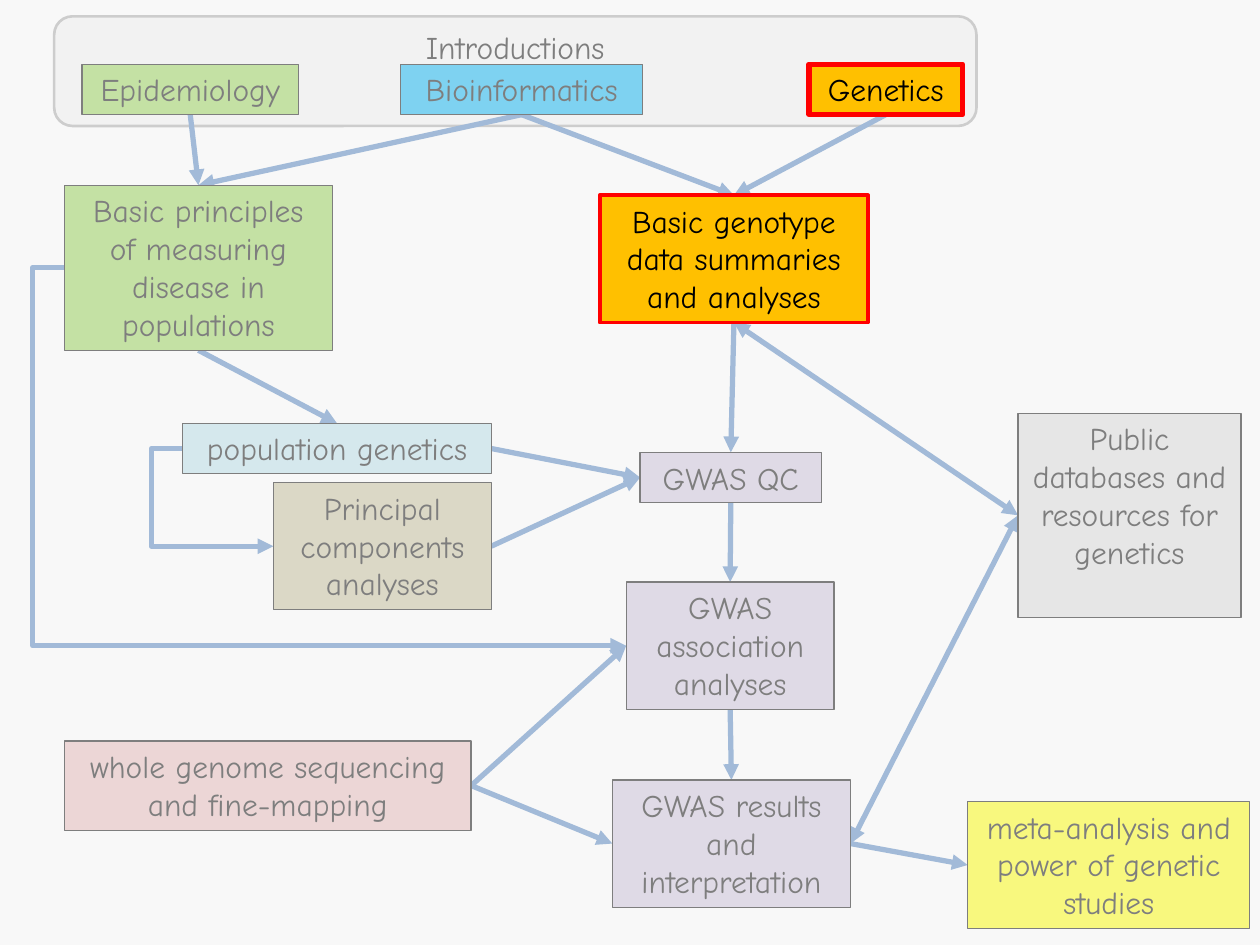
from enum import IntEnum
from lxml.etree import SubElement
from pptx import Presentation
from pptx.dml.color import RGBColor
from pptx.enum.shapes import MSO_CONNECTOR, MSO_SHAPE
from pptx.enum.text import MSO_ANCHOR, MSO_AUTO_SIZE, PP_ALIGN
from pptx.oxml.ns import qn
from pptx.util import Inches, Pt

COLORS = {
    "text": "000000", "outline": "000000", "arrow": "4B7EBC", "veil": "F2F2F2",
    "panel": "F2F2F2", "panel line": "A6A6A6", "epidemiology": "92D050",
    "bioinformatics": "00B0F0", "genetics": "FFC000", "highlight": "FF0000",
    "population": "B7DEE8", "components": "C4BD97", "gwas": "CCC1DA",
    "sequencing": "E6B9B8", "databases": "D9D9D9", "meta": "FFFF00",
}
COLUMNS, ROWS = 100, 75

FADED_TOPICS = {
    "databases": ("Public databases and resources for genetics", "databases", (80.8, 32.8, 17.7, 16.2)),
    "sequencing": ("whole genome sequencing and fine-mapping", "sequencing", (5.1, 58.8, 32.3, 7.1)),
    "meta": ("meta-analysis and power of genetic studies", "meta", (76.8, 63.6, 22.4, 10.1)),
    "results": ("GWAS results and interpretation", "gwas", (48.6, 61.9, 18.9, 10.1)),
    "quality": ("GWAS QC", "gwas", (50.8, 35.9, 14.4, 4)),
    "principles": ("Basic principles of measuring disease in populations", "epidemiology", (5.1, 14.7, 21.3, 13.1)),
    "population": ("population genetics", "population", (14.5, 33.6, 24.5, 4)),
    "components": ("Principal components analyses", "components", (21.7, 38.3, 17.3, 10.1)),
    "association": ("GWAS association analyses", "gwas", (49.7, 46.2, 16.5, 10.1)),
    "epidemiology": ("Epidemiology", "epidemiology", (6.5, 5.1, 17.2, 4)),
    "bioinformatics": ("Bioinformatics", "bioinformatics", (31.8, 5.1, 19.2, 4)),
}
HIGHLIGHTED_TOPICS = {
    "genetics": ("Genetics", "genetics", (64.2, 5.1, 12.2, 4), "highlight", 3),
    "genotype": ("Basic genotype data summaries and analyses", "genetics", (47.6, 15.5, 21.3, 10.1), "highlight", 2.25),
}


class Side(IntEnum):
    """Connection sites of a rectangle."""
    TOP, LEFT, BOTTOM, RIGHT = range(4)


DOWNWARD = (Side.BOTTOM, Side.TOP)
ACROSS = (Side.RIGHT, Side.LEFT)
ARROWS = [
    ("genetics", "genotype", DOWNWARD),
    ("epidemiology", "principles", DOWNWARD),
    ("bioinformatics", "genotype", DOWNWARD),
    ("bioinformatics", "principles", DOWNWARD),
    ("genotype", "quality", DOWNWARD),
    ("quality", "association", DOWNWARD),
    ("association", "results", DOWNWARD),
    ("principles", "population", DOWNWARD),
    ("results", "meta", ACROSS),
    ("population", "quality", ACROSS),
    ("components", "quality", ACROSS),
    ("sequencing", "association", ACROSS),
    ("sequencing", "results", ACROSS),
]
TWO_WAY_ARROWS = [
    ("results", "databases", ACROSS),
    ("genotype", "databases", (Side.BOTTOM, Side.LEFT)),
]
DETOURS = [("population", "components"), ("principles", "association")]


class Diagram:
    """Draws topic boxes and arrows on one slide, measured in grid cells."""

    def __init__(self, presentation):
        self.slide = presentation.slides.add_slide(presentation.slide_layouts[6])
        self.column = presentation.slide_width / COLUMNS
        self.row = presentation.slide_height / ROWS
        self.font_name, self.font_size = "Comic Neue", Pt(18)
        self.topics = {}

    def color(self, name):
        """Return the named colour."""
        return RGBColor.from_string(COLORS[name])

    def block(self, kind, area, fill, line=None, width=0.75):
        """Add a filled shape over an area of left, top, columns and rows."""
        left, top, columns, rows = area
        shape = self.slide.shapes.add_shape(
            kind, round(left * self.column), round(top * self.row),
            round(columns * self.column), round(rows * self.row))
        shape.shadow.inherit = False
        shape.fill.solid()
        shape.fill.fore_color.rgb = self.color(fill)
        if line:
            shape.line.color.rgb = self.color(line)
            shape.line.width = Pt(width)
        else:
            shape.line.fill.background()
        return shape

    def label(self, shape, text):
        """Put centred text at the top of a shape."""
        frame = shape.text_frame
        frame.word_wrap = True
        frame.vertical_anchor = MSO_ANCHOR.TOP
        paragraph = frame.paragraphs[0]
        paragraph.text = text
        paragraph.alignment = PP_ALIGN.CENTER
        paragraph.font.name = self.font_name
        paragraph.font.size = self.font_size
        paragraph.font.color.rgb = self.color("text")

    def panel(self, text, area):
        """Add the rounded panel that groups the introductions."""
        self.backdrop = self.block(MSO_SHAPE.ROUNDED_RECTANGLE, area, "panel", "panel line", 1.5)
        self.label(self.backdrop, text)

    def topic(self, name, text, fill, area, line="outline", width=0.75):
        """Add a topic box that arrows can refer to by name."""
        shape = self.block(MSO_SHAPE.RECTANGLE, area, fill, line, width)
        self.label(shape, text)
        shape.text_frame.word_wrap = area[3] > 4
        shape.text_frame.auto_size = MSO_AUTO_SIZE.SHAPE_TO_FIT_TEXT
        self.topics[name] = shape

    def veil(self, opacity):
        """Fade everything drawn so far."""
        shape = self.block(MSO_SHAPE.RECTANGLE, (0, 0, COLUMNS, ROWS), "veil")
        color = shape._element.spPr.find(".//" + qn("a:srgbClr"))
        SubElement(color, qn("a:alpha"), val=str(opacity * 1000))

    def arrow(self, start, end, sides, two_way=False, kind=MSO_CONNECTOR.STRAIGHT):
        """Join two topics with an arrow that lies behind the boxes."""
        connector = self.slide.shapes.add_connector(kind, 0, 0, 0, 0)
        connector.begin_connect(self.topics[start], sides[0])
        connector.end_connect(self.topics[end], sides[1])
        connector.line.color.rgb = self.color("arrow")
        connector.line.width = Pt(3)
        line = connector._element.spPr.find(qn("a:ln"))
        for tag in ["a:headEnd"] * two_way + ["a:tailEnd"]:
            SubElement(line, qn(tag), type="triangle")
        SubElement(connector._element.spPr, qn("a:effectLst"))
        self.backdrop._element.addnext(connector._element)
        return connector

    def detour(self, start, end, reach=2.5):
        """Join two left sides with an arrow that bends out by some columns."""
        connector = self.arrow(start, end, (Side.LEFT, Side.LEFT), kind=MSO_CONNECTOR.ELBOW)
        share = round(-reach * self.column / connector.width * 100000)
        adjustments = connector._element.spPr.find(".//" + qn("a:avLst"))
        SubElement(adjustments, qn("a:gd"), name="adj1", fmla=f"val {share}")


def main():
    """Build the course map."""
    presentation = Presentation()
    presentation.slide_width, presentation.slide_height = Inches(10), Inches(7.5)
    diagram = Diagram(presentation)
    diagram.panel("Introductions", (4.3, 1.3, 73.2, 8.7))
    for name, details in FADED_TOPICS.items():
        diagram.topic(name, *details)
    diagram.veil(52)
    for name, details in HIGHLIGHTED_TOPICS.items():
        diagram.topic(name, *details)
    for arrow in ARROWS:
        diagram.arrow(*arrow)
    for arrow in TWO_WAY_ARROWS:
        diagram.arrow(*arrow, two_way=True)
    for detour in DETOURS:
        diagram.detour(*detour)
    presentation.save("out.pptx")


if __name__ == "__main__":
    main()
